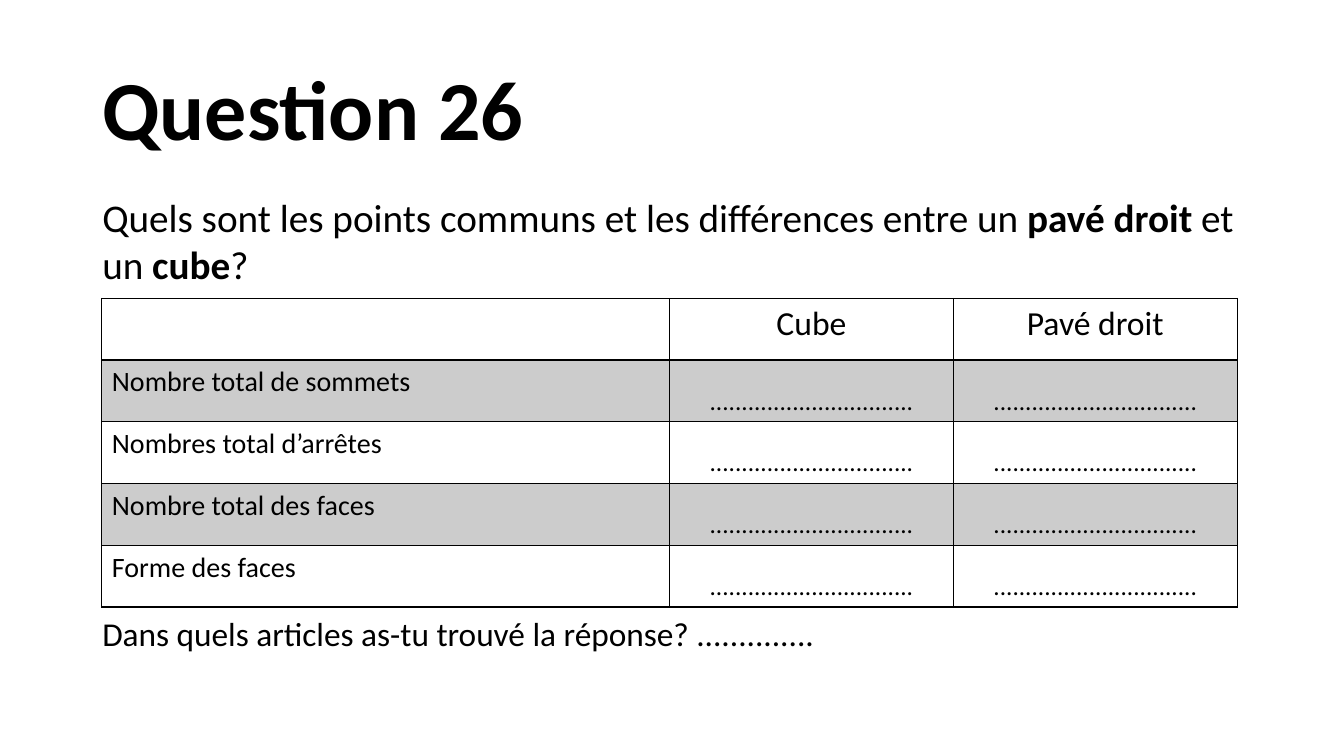
from dataclasses import dataclass

import lxml.etree
import pptx
import pptx.dml.color
import pptx.enum.text
import pptx.oxml.ns
import pptx.util

Pt = pptx.util.Pt
Align = pptx.enum.text.PP_ALIGN
Anchor = pptx.enum.text.MSO_ANCHOR


@dataclass(frozen=True)
class Theme:
    font: str = "Calibri"
    ink: str = "000000"
    shade_percent: int = 20
    title: float = 60
    question: float = 28
    source: float = 23.8
    heading: float = 24
    label: float = 20
    answer: float = 18
    border: float = 1
    heading_border: float = 2


THEME = Theme()
ANSWER = "." * 32
HEADINGS = ["", "Cube", "Pavé droit"]
LABELS = [
    "Nombre total de sommets",
    "Nombres total d’arrêtes",
    "Nombre total des faces",
    "Forme des faces",
]
QUESTION = [
    [
        ("Quels sont les points communs et les différences entre un ", False),
        ("pavé droit ", True),
        ("et", False),
    ],
    [("un ", False), ("cube", True), ("?", False)],
]
SOURCE = [("Dans quels articles as-tu trouvé la réponse? ..............", False)]


def apply(target, values):
    for name, value in values.items():
        setattr(target, name, value)


def write(para, spans, size, **layout):
    apply(para, layout)
    for text, bold in spans:
        span = para.add_run()
        span.text = text
        apply(span.font, {"name": THEME.font, "size": Pt(size), "bold": bold})
        span.font.color.rgb = pptx.dml.color.RGBColor.from_string(THEME.ink)


def add_frame(page, box, anchor):
    frame = page.shapes.add_textbox(*map(Pt, box)).text_frame
    apply(frame, {"word_wrap": True, "vertical_anchor": anchor})
    return frame


def add_title(page, box):
    frame = add_frame(page, box, Anchor.MIDDLE)
    write(frame.paragraphs[0], [("Question 26", True)], THEME.title, line_spacing=0.9)


def add_body(page, box):
    frame = add_frame(page, box, Anchor.TOP)
    first, second = QUESTION
    write(frame.paragraphs[0], first, THEME.question, line_spacing=0.7)
    write(frame.add_paragraph(), second, THEME.question,
          line_spacing=0.7, space_before=Pt(10))
    write(frame.add_paragraph(), SOURCE, THEME.source,
          line_spacing=0.7, space_before=Pt(241.5))


def draw_borders(cell, widths):
    properties = cell._tc.get_or_add_tcPr()
    qualified = pptx.oxml.ns.qn
    for side, width in widths.items():
        line = lxml.etree.SubElement(properties, qualified(f"a:ln{side}"), w=str(Pt(width)))
        fill = lxml.etree.SubElement(line, qualified("a:solidFill"))
        lxml.etree.SubElement(fill, qualified("a:srgbClr"), val=THEME.ink)


def fill_cell(cell, shaded):
    if not shaded:
        cell.fill.background()
        return
    cell.fill.solid()
    cell.fill.fore_color.rgb = pptx.dml.color.RGBColor.from_string(THEME.ink)
    color = cell._tc.tcPr.find(".//" + pptx.oxml.ns.qn("a:solidFill") + "[last()]")
    color = cell._tc.tcPr.findall(pptx.oxml.ns.qn("a:solidFill"))[0][0]
    lxml.etree.SubElement(color, pptx.oxml.ns.qn("a:alpha"),
                          val=str(THEME.shade_percent * 1000))


def add_comparison(page, box):
    rows = [HEADINGS] + [[label, ANSWER, ANSWER] for label in LABELS]
    table = page.shapes.add_table(len(rows), len(HEADINGS), *map(Pt, box)).table
    apply(table, {"first_row": False, "horz_banding": False})
    for column, share in zip(table.columns, [0.5, 0.25, 0.25]):
        column.width = Pt(box[2] * share)
    for row, texts in enumerate(rows):
        table.rows[row].height = Pt(box[3] / len(rows))
        for column, text in enumerate(texts):
            cell = table.cell(row, column)
            answer = row > 0 and column > 0
            size = THEME.answer if answer else THEME.label if row else THEME.heading
            cell.vertical_anchor = Anchor.BOTTOM if answer else Anchor.TOP
            if text:
                write(cell.text_frame.paragraphs[0], [(text, False)], size,
                      alignment=Align.CENTER if column else Align.LEFT)
            draw_borders(cell, {
                "L": THEME.border,
                "R": THEME.border,
                "T": THEME.heading_border if row == 1 else THEME.border,
                "B": THEME.heading_border if row == 0 else THEME.border,
            })
            fill_cell(cell, row % 2 == 1)


def main():
    deck = pptx.Presentation()
    apply(deck, {"slide_width": Pt(960), "slide_height": Pt(540)})
    page = deck.slides.add_slide(deck.slide_layouts[6])
    add_title(page, (66, 28.75, 828, 104.4))
    add_body(page, (66, 144, 828, 342.7))
    add_comparison(page, (72.75, 213.2, 811, 220.5))
    deck.save("out.pptx")


if __name__ == "__main__":
    main()
